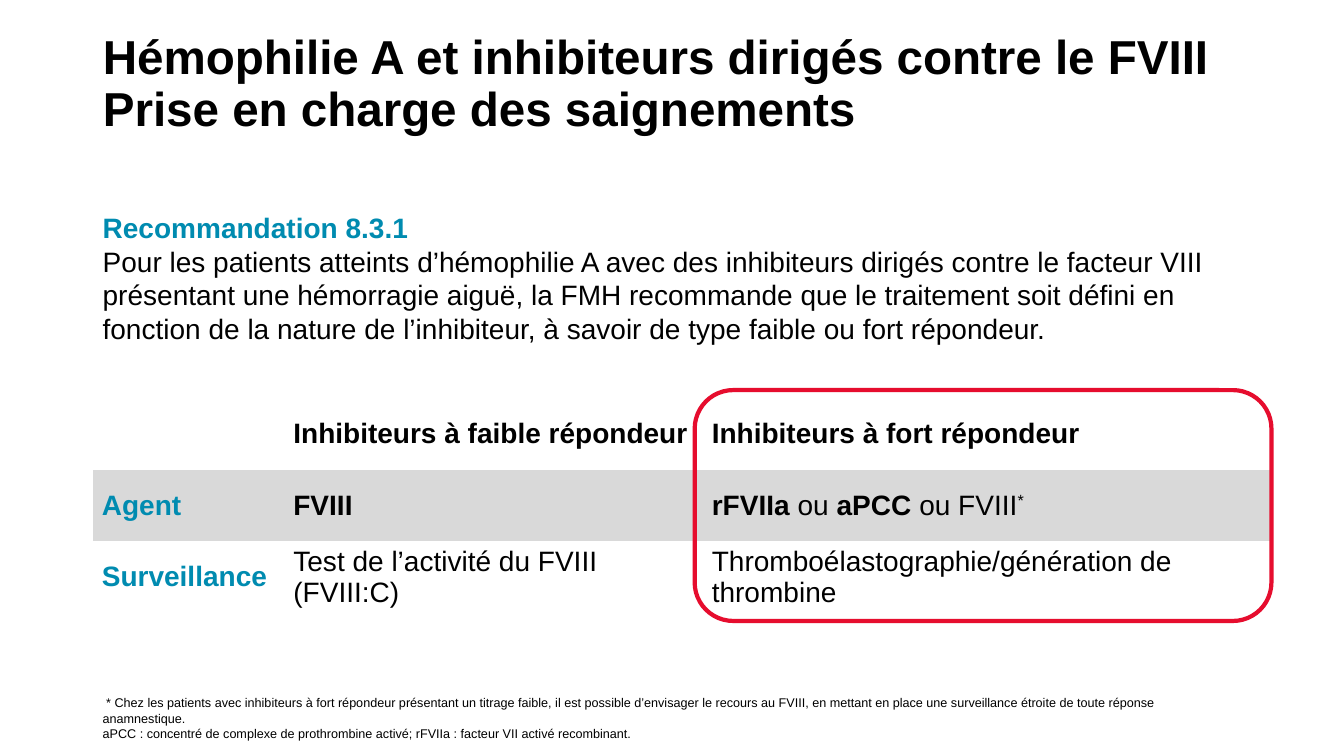
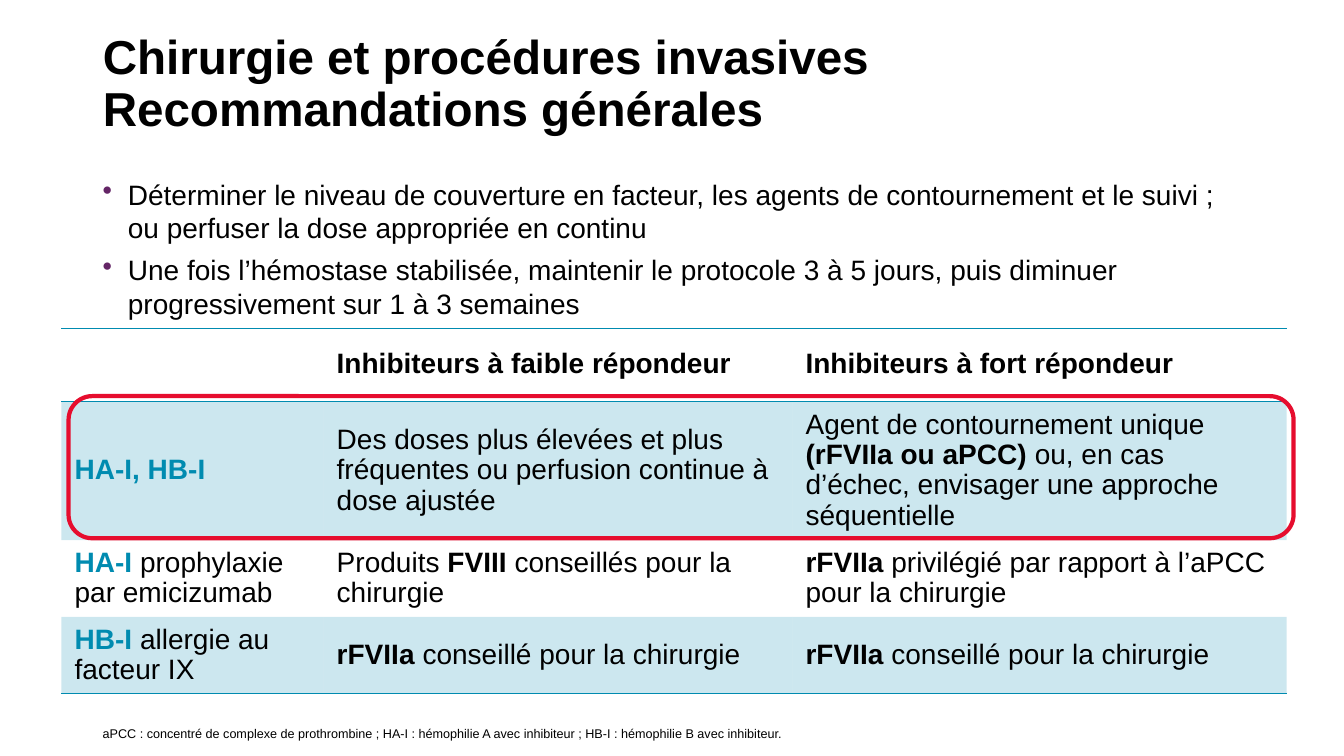
from lxml import etree
from pptx import Presentation
from pptx.dml.color import RGBColor
from pptx.enum.shapes import MSO_SHAPE
from pptx.enum.text import MSO_ANCHOR, MSO_AUTO_SIZE, PP_ALIGN
from pptx.oxml.ns import qn
from pptx.util import Inches, Pt

MIDDLE, TOP, BOTTOM = MSO_ANCHOR.MIDDLE, MSO_ANCHOR.TOP, MSO_ANCHOR.BOTTOM
LEFT = PP_ALIGN.LEFT
NO_AUTOFIT = MSO_AUTO_SIZE.NONE
ROUNDED = MSO_SHAPE.ROUNDED_RECTANGLE

BLACK, TEAL, RED, PURPLE = "000000", "008BB0", "E60D2E", "642566"
WHITE, GREY = "FFFFFF", "D9D9D9"
PLAIN_TABLE = "{2D5ABB26-0587-4C30-8999-92F81FD0307C}"
MARGIN, CONTENT_WIDTH = 0.92, 11.5

RUN_STYLES = {
    "plain": ({"bold": False}, BLACK),
    "strong": ({"bold": True}, BLACK),
    "accent": ({"bold": True}, TEAL),
    "superscript": ({"bold": False}, BLACK),
}


def rgb(code):
    return RGBColor.from_string(code)


def apply(target, values):
    for name, value in values.items():
        setattr(target, name, value)


def add_xml(parent, tag, **attributes):
    return etree.SubElement(parent, qn(tag), attributes)


def plain(text):
    return [("plain", text)]


def strong(text):
    return [("strong", text)]


def accent(text):
    return [("accent", text)]


class Deck:
    font = "Arial"
    title_size, body_size, note_size = 34, 20, 9

    def __init__(self):
        self.presentation = Presentation()
        apply(self.presentation, {"slide_width": Inches(13.33), "slide_height": Inches(7.5)})
        self.slide = None

    def add_runs(self, paragraph, runs, size, spacing=None):
        apply(paragraph, {"alignment": LEFT, **(spacing or {})})
        for style, text in runs:
            run = paragraph.add_run()
            run.text = text
            weight, color = RUN_STYLES[style]
            apply(run.font, {"name": self.font, "size": Pt(size), **weight})
            run.font.color.rgb = rgb(color)
            if style == "superscript":
                run._r.get_or_add_rPr().set("baseline", "30000")

    def title(self, *lines):
        layout = self.presentation.slide_layouts[5]
        self.slide = self.presentation.slides.add_slide(layout)
        heading = self.slide.shapes.title
        apply(heading, {"left": Inches(MARGIN), "top": Inches(0.25),
                        "width": Inches(CONTENT_WIDTH), "height": Inches(1.19)})
        apply(heading.text_frame, {"vertical_anchor": MIDDLE, "word_wrap": True,
                                   "auto_size": NO_AUTOFIT})
        paragraph = heading.text_frame.paragraphs[0]
        for index, line in enumerate(lines):
            if index:
                paragraph.add_line_break()
            self.add_runs(paragraph, strong(line), self.title_size, {"line_spacing": 0.9})

    def text(self, box, paragraphs, size, frame_format, spacing=None, gap=0, bullets=False):
        frame = self.slide.shapes.add_textbox(*map(Inches, box)).text_frame
        apply(frame, {"word_wrap": True, "auto_size": NO_AUTOFIT, **frame_format})
        for index, runs in enumerate(paragraphs):
            paragraph = frame.add_paragraph() if index else frame.paragraphs[0]
            if bullets:
                self.bullet(paragraph)
            space = {"space_before": Pt(gap)} if index else {}
            self.add_runs(paragraph, runs, size, {**(spacing or {}), **space})

    def bullet(self, paragraph):
        properties = paragraph._p.get_or_add_pPr()
        indent = Inches(0.25)
        properties.set("marL", str(indent))
        properties.set("indent", str(-indent))
        add_xml(add_xml(properties, "a:buClr"), "a:srgbClr", val=PURPLE)
        add_xml(properties, "a:buChar", char="•")

    def body(self, top, paragraphs, gap=0, bullets=False):
        self.text((MARGIN, top, CONTENT_WIDTH, 6.76 - top), paragraphs, self.body_size,
                  {"vertical_anchor": TOP}, {"line_spacing": Pt(24)}, gap, bullets)

    def footnote(self, *lines):
        self.text((MARGIN, 6.95, 10.85, 0.4), map(plain, lines), self.note_size,
                  {"vertical_anchor": BOTTOM, "margin_bottom": 0})

    def table(self, origin, widths, heights, rows, fills, padding,
              line_spacing=1.0, rules=None, alpha=100):
        extent = (sum(widths), sum(heights))
        grid = self.slide.shapes.add_table(
            len(rows), len(widths), *map(Inches, origin + extent)).table
        apply(grid, {"first_row": False, "horz_banding": False})
        grid._tbl.tblPr.find(qn("a:tableStyleId")).text = PLAIN_TABLE
        for column, width in zip(grid.columns, widths):
            column.width = Inches(width)
        side, edge = map(Inches, padding)
        for index, (row, height) in enumerate(zip(grid.rows, heights)):
            row.height = Inches(height)
            for cell, runs in zip(row.cells, rows[index]):
                apply(cell, {"vertical_anchor": MIDDLE, "margin_left": side,
                             "margin_right": side, "margin_top": edge,
                             "margin_bottom": edge})
                self.add_runs(cell.text_frame.paragraphs[0], runs, self.body_size,
                              {"line_spacing": line_spacing})
                self.fill_cell(cell, fills[index], alpha)
                self.rule_cell(cell, (rules or {}).get(index, ()))

    def fill_cell(self, cell, color, alpha):
        if color is None:
            cell.fill.background()
            return
        cell.fill.solid()
        cell.fill.fore_color.rgb = rgb(color)
        if alpha < 100:
            tint = cell._tc.tcPr.find(".//" + qn("a:srgbClr"))
            add_xml(tint, "a:alpha", val=str(alpha * 1000))

    def rule_cell(self, cell, sides):
        properties = cell._tc.get_or_add_tcPr()
        for position, side in enumerate(sides):
            border = add_xml(properties, "a:ln" + side, w=str(Pt(1)))
            add_xml(add_xml(border, "a:solidFill"), "a:srgbClr", val=TEAL)
            properties.insert(position, border)

    def highlight(self, *box):
        frame = self.slide.shapes.add_shape(ROUNDED, *map(Inches, box))
        frame.shadow.inherit = False
        frame.fill.background()
        frame.line.color.rgb = rgb(RED)
        frame.line.width = Pt(3)


def main():
    deck = Deck()
    responders = [[], strong("Inhibiteurs à faible répondeur"),
                  strong("Inhibiteurs à fort répondeur")]

    deck.title("Hémophilie A et inhibiteurs dirigés contre le FVIII",
               "Prise en charge des saignements")
    deck.body(2.04, [
        accent("Recommandation 8.3.1"),
        plain("Pour les patients atteints d’hémophilie A avec des inhibiteurs dirigés "
              "contre le facteur VIII présentant une hémorragie aiguë, la FMH recommande "
              "que le traitement soit défini en fonction de la nature de l’inhibiteur, "
              "à savoir de type faible ou fort répondeur."),
    ])
    deck.table(
        (MARGIN, 3.95), (1.9, 4.15, 5.65), (0.71,) * 3,
        [
            responders,
            [accent("Agent"), strong("FVIII"),
             [("strong", "rFVIIa"), ("plain", " ou "), ("strong", "aPCC "),
              ("plain", "ou FVIII"), ("superscript", "*")]],
            [accent("Surveillance"), plain("Test de l’activité du FVIII (FVIII:C)"),
             plain("Thromboélastographie/génération de thrombine")],
        ],
        (WHITE, GREY, None), (0.09, 0.03))
    deck.highlight(6.89, 3.87, 5.72, 2.29)
    deck.footnote(
        " * Chez les patients avec inhibiteurs à fort répondeur présentant un titrage "
        "faible, il est possible d’envisager le recours au FVIII, en mettant en place "
        "une surveillance étroite de toute réponse anamnestique.",
        "aPCC : concentré de complexe de prothrombine activé; "
        "rFVIIa : facteur VII activé recombinant.")

    deck.title("Chirurgie et procédures invasives", "Recommandations générales")
    deck.body(1.71, [
        plain("Déterminer le niveau de couverture en facteur, les agents de contournement "
              "et le suivi ; ou perfuser la dose appropriée en continu"),
        plain("Une fois l’hémostase stabilisée, maintenir le protocole 3 à 5 jours, puis "
              "diminuer progressivement sur 1 à 3 semaines"),
    ], gap=6, bullets=True)
    deck.footnote("aPCC : concentré de complexe de prothrombine ; HA-I : hémophilie A avec "
                  "inhibiteur ; HB-I : hémophilie B avec inhibiteur.")
    surgery_advice = [("strong", "rFVIIa "), ("plain", "conseillé pour la chirurgie")]
    deck.table(
        (0.61, 3.26), (2.6, 4.65, 4.9), (0.72, 1.38, 0.76, 0.76),
        [
            responders,
            [accent("HA-I, HB-I"),
             plain("Des doses plus élevées et plus fréquentes ou perfusion continue "
                   "à dose ajustée"),
             [("plain", "Agent de contournement unique "), ("strong", "(rFVIIa ou aPCC) "),
              ("plain", "ou, en cas d’échec, envisager une approche séquentielle")]],
            [[("accent", "HA-I "), ("plain", "prophylaxie par emicizumab")],
             [("plain", "Produits "), ("strong", "FVIII "),
              ("plain", "conseillés pour la chirurgie")],
             [("strong", "rFVIIa"),
              ("plain", " privilégié par rapport à l’aPCC pour la chirurgie")]],
            [[("accent", "HB-I "), ("plain", "allergie au facteur IX")],
             surgery_advice, surgery_advice],
        ],
        (None, TEAL, None, TEAL), (0.13, 0.07), line_spacing=0.97,
        rules={0: "TB", 3: "B"}, alpha=20)
    deck.highlight(0.68, 3.93, 12.15, 1.41)

    deck.presentation.save("out.pptx")


if __name__ == "__main__":
    main()
